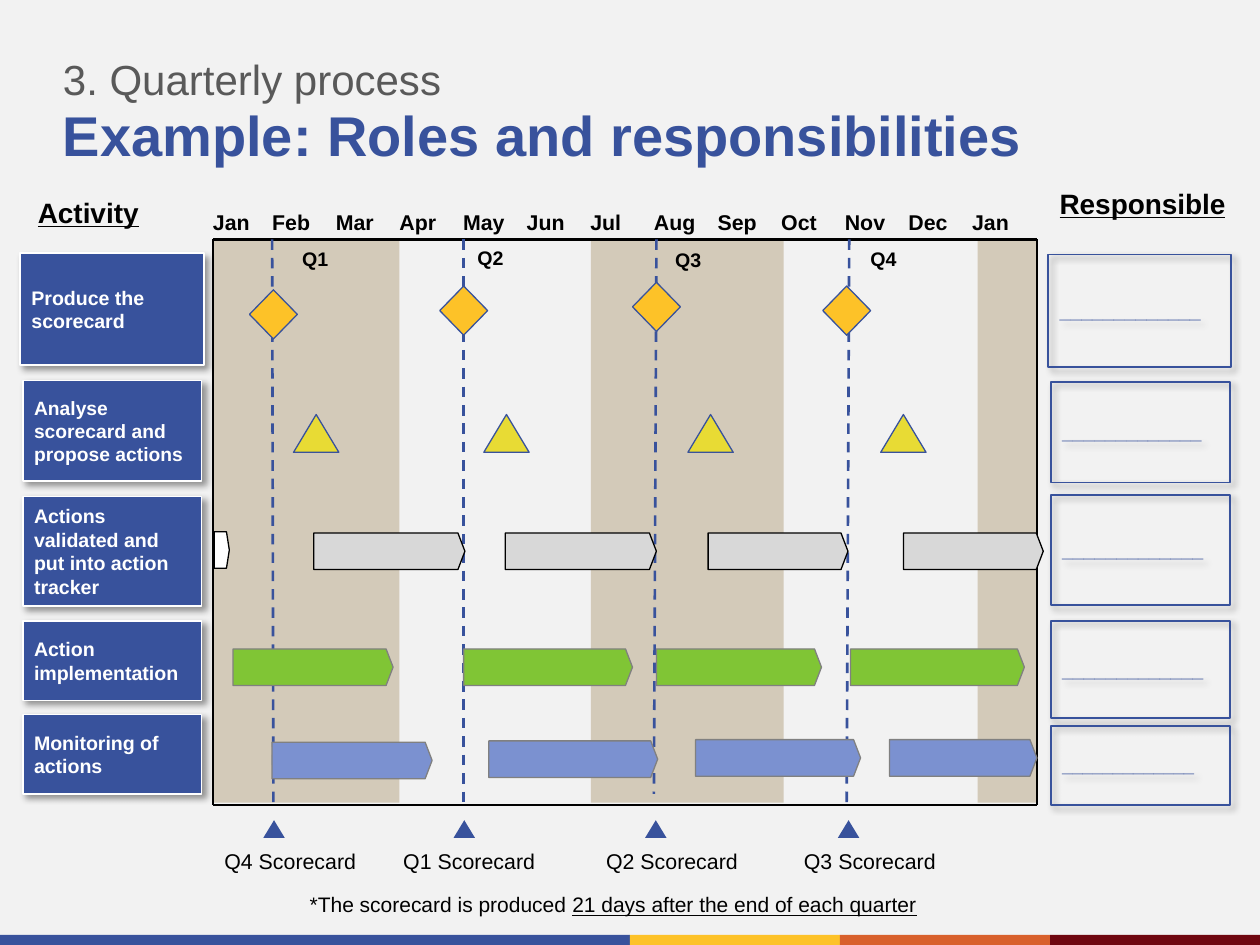
from lxml.etree import SubElement
from pptx import Presentation
from pptx.dml.color import RGBColor
from pptx.enum.dml import MSO_LINE
from pptx.enum.shapes import MSO_CONNECTOR, MSO_SHAPE
from pptx.enum.text import MSO_ANCHOR, PP_ALIGN
from pptx.oxml.ns import qn
from pptx.util import Inches, Pt

COLORS = {
    "page": "F2F2F2", "blue": "38529C", "yellow": "FDC228", "orange": "D8602C",
    "maroon": "6F0710", "title grey": "595959", "sand": "D3CAB9", "white": "FFFFFF",
    "black": "000000", "green": "80C535", "silver": "D8D8D8", "grey": "808080",
    "lime": "E8DB34", "light blue": "7B91D0",
}
COLUMNS, ROWS = 100, 75


class Sheet:
    """Places elements on a page, measured in columns and rows of a grid."""
    font = "Arial"

    def __init__(self, deck):
        deck.slide_width, deck.slide_height = Inches(10), Inches(7.5)
        self.column = deck.slide_width / COLUMNS
        self.row = deck.slide_height / ROWS
        self.page = deck.slides.add_slide(deck.slide_layouts[6])
        self.paint(self.page.background.fill, "page")

    def paint(self, fill, color):
        fill.solid()
        fill.fore_color.rgb = RGBColor.from_string(COLORS[color])

    def scale(self, left, top, width, height):
        return [round(size) for size in (left * self.column, top * self.row,
                                         width * self.column, height * self.row)]

    def add_spans(self, box, spans, size, color="black", bold=False, insets=(0, 0),
                  anchor=MSO_ANCHOR.TOP, wrap=True, spacing=None):
        """Fill a box with one paragraph of (text, underlined) spans."""
        frame = box.text_frame
        frame.word_wrap = wrap
        frame.vertical_anchor = anchor
        frame.margin_left = frame.margin_right = Inches(insets[0])
        frame.margin_top = frame.margin_bottom = Inches(insets[1])
        para = frame.paragraphs[0]
        para.alignment = PP_ALIGN.LEFT
        if spacing:
            para.line_spacing = spacing
        for text, underlined in spans:
            span = para.add_run()
            span.text = text
            font = span.font
            font.name, font.size, font.bold = self.font, Pt(size), bold
            font.underline = underlined
            font.color.rgb = RGBColor.from_string(COLORS[color])

    def text(self, place, words, size, underlined=False, **style):
        spans = [(words, underlined)] if isinstance(words, str) else words
        box = self.page.shapes.add_textbox(*self.scale(*place))
        self.add_spans(box, spans, size, **style)

    def shape(self, kind, place, fill=None, line=None, weight=0.75):
        shape = self.page.shapes.add_shape(kind, *self.scale(*place))
        shape.shadow.inherit = False
        if fill:
            self.paint(shape.fill, fill)
        else:
            shape.fill.background()
        if line:
            self.paint(shape.line.fill, line)
            shape.line.width = Pt(weight)
        else:
            shape.line.fill.background()
        return shape

    def card(self, place, words, size, fill, line, color):
        """Draw a shadowed box with bold text."""
        card = self.shape(MSO_SHAPE.RECTANGLE, place, fill, line, 1)
        effects = card._element.spPr.find(qn("a:effectLst"))
        shadow = SubElement(effects, qn("a:outerShdw"), blurRad=str(Pt(4)),
                            dist=str(Pt(3)), dir="2700000", algn="tl", rotWithShape="0")
        tint = SubElement(shadow, qn("a:srgbClr"), val=COLORS["black"])
        SubElement(tint, qn("a:alpha"), val="40000")
        self.add_spans(card, [(words, False)], size, color, bold=True,
                       insets=(0.09, 0.09), anchor=MSO_ANCHOR.MIDDLE)

    def bar(self, place, fill, line):
        self.shape(MSO_SHAPE.PENTAGON, place, fill, line).adjustments[0] = 0.19

    def line(self, start, end, color="black", weight=1.5, dashed=False):
        ends = self.scale(*start, *end)
        line = self.page.shapes.add_connector(MSO_CONNECTOR.STRAIGHT, *ends)
        self.paint(line.line.fill, color)
        line.line.width = Pt(weight)
        if dashed:
            line.line.dash_style = MSO_LINE.DASH
        SubElement(line._element.spPr, qn("a:effectLst"))


def add_heading(sheet):
    left = 0
    for width, color in ((50, "blue"), (16.67, "yellow"), (16.67, "orange"), (16.66, "maroon")):
        sheet.shape(MSO_SHAPE.RECTANGLE, (left, 74.2, width, 0.8), color)
        left += width
    sheet.text((5, 4.7, 90, 3.6), "3. Quarterly process", 24, color="title grey", spacing=0.9)
    sheet.text((5, 8.6, 90, 4.8), "Example: Roles and responsibilities", 32,
               color="blue", bold=True, spacing=0.9)
    sheet.text((3, 15.5, 12.8, 2.7), "Activity", 16, underlined=True, bold=True)
    sheet.text((84.1, 14.8, 14, 2.7), "Responsible", 16, underlined=True, bold=True)


def add_calendar(sheet):
    left, right, top, bottom = 16.9, 82.3, 19, 63.9
    for start, width in ((left, 14.8), (46.9, 15.3), (77.6, 4.7)):
        sheet.shape(MSO_SHAPE.RECTANGLE, (start, top, width, 44.7), "sand")
    months = "Jan Feb Mar Apr May Jun Jul Aug Sep Oct Nov Dec Jan".split()
    for index, month in enumerate(months):
        start = 21.6 + 5.05 * (index - 1) if index else left
        sheet.text((start, 16.3, 5.1, 2.7), month, 12.2, bold=True,
                   insets=(0, 0.04), anchor=MSO_ANCHOR.MIDDLE, wrap=False)
    for edge in (left, right):
        sheet.line((edge, top), (edge, bottom), weight=0.75)
    for level in (top, bottom):
        sheet.line((left, level), (right, level))
    for start, end, foot in ((21.6, 21.7, 63.7), (36.8, 36.8, 63.7),
                             (52.1, 51.9, 63), (67.4, 67.2, 63.7)):
        sheet.line((start, top), (end, foot), "blue", dashed=True)


def add_bars(sheet):
    height = 2.9
    sheet.bar((17, 42.2, 1.2, height), "white", "black")
    rows = (
        ("silver", "black", ((24.9, 42.3, 12), (40.1, 42.3, 12),
                             (56.2, 42.3, 11.1), (71.7, 42.3, 11.1))),
        ("green", "grey", ((18.5, 51.5, 12.7), (36.8, 51.5, 13.4),
                           (52.1, 51.5, 13.1), (67.5, 51.5, 13.8))),
        ("light blue", "grey", ((21.6, 58.9, 12.7), (38.8, 58.8, 13.4),
                                (55.2, 58.7, 13.1), (70.6, 58.7, 11.7))),
    )
    for fill, line, bars in rows:
        for left, top, width in bars:
            sheet.bar((left, top, width, height), fill, line)


def add_quarters(sheet):
    # name, name place, diamond place, triangle left, pointer left, label, label left
    quarters = (
        ("Q1", (23, 19.1), (19.8, 23), 23.3, 20.9, "Q4 Scorecard", 17.8),
        ("Q2", (36.9, 19), (34.9, 22.7), 38.4, 36, "Q1 Scorecard", 32),
        ("Q3", (52.6, 19.2), (50.2, 22.4), 54.6, 51.2, "Q2 Scorecard", 48.1),
        ("Q4", (68.1, 19.1), (65.3, 22.7), 69.9, 66.5, "Q3 Scorecard", 63.8),
    )
    for name, place, diamond, triangle, pointer, label, label_left in quarters:
        sheet.text((*place, 5.1, 3), name, 11.2, bold=True, insets=(0.1, 0.05))
        sheet.shape(MSO_SHAPE.DIAMOND, (*diamond, 3.8, 3.9), "yellow", "blue")
        sheet.shape(MSO_SHAPE.ISOSCELES_TRIANGLE, (triangle, 32.9, 3.6, 3), "lime", "blue")
        sheet.shape(MSO_SHAPE.ISOSCELES_TRIANGLE, (pointer, 65.1, 1.7, 1.4), "blue")
        box = sheet.shape(MSO_SHAPE.RECTANGLE, (label_left, 67.3, 10.2, 2), "page")
        sheet.add_spans(box, [(label, False)], 12.2, wrap=False)


def add_cards(sheet):
    # activity, text size, activity card, blank card, blank text size
    activities = (
        ("Produce the scorecard", 11.2, (1.6, 20.1, 14.6, 8.9), (83.2, 20.2, 14.5, 8.9), 11.2),
        ("Analyse scorecard and propose actions", 11,
         (1.8, 30.2, 14.2, 8), (83.4, 30.3, 14.2, 8), 11),
        ("Actions validated and put into action tracker", 11.2,
         (1.8, 39.4, 14.2, 8.7), (83.4, 39.3, 14.2, 8.7), 11.2),
        ("Action implementation", 11.2, (1.8, 49.3, 14.2, 6.3), (83.4, 49.3, 14.2, 7.7), 11.2),
        ("Monitoring of actions", 11.2, (1.8, 56.7, 14.2, 6.3), (83.4, 57.6, 14.2, 6.3), 10.5),
    )
    for activity, size, place, blank_place, blank_size in activities:
        sheet.card(place, activity, size, "blue", "white", "white")
        sheet.card(blank_place, "_" * 13, blank_size, None, "blue", "blue")


def main():
    deck = Presentation()
    sheet = Sheet(deck)
    add_heading(sheet)
    add_calendar(sheet)
    add_bars(sheet)
    add_quarters(sheet)
    add_cards(sheet)
    sheet.text((23.6, 70.3, 76.4, 3), [("*The scorecard is produced ", False),
               ("21 days after the end of each quarter", True)], 12, insets=(0.1, 0.05))
    deck.save("out.pptx")


if __name__ == "__main__":
    main()
